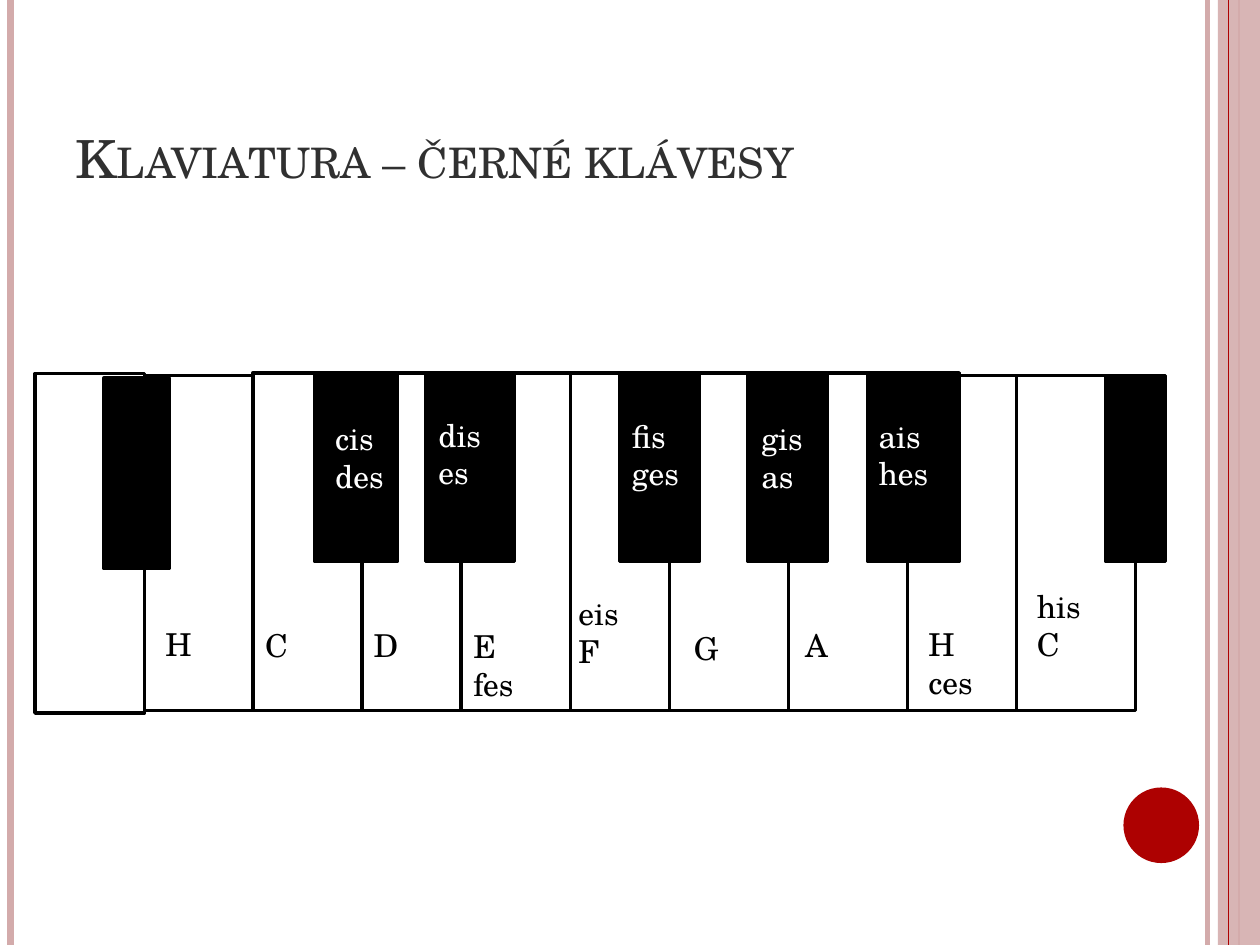
from dataclasses import dataclass

from lxml import etree
from pptx import Presentation
from pptx.dml.color import RGBColor
from pptx.enum.shapes import MSO_CONNECTOR, MSO_SHAPE
from pptx.enum.text import MSO_ANCHOR
from pptx.oxml.ns import qn
from pptx.util import Pt

RECTANGLE, OVAL = MSO_SHAPE.RECTANGLE, MSO_SHAPE.OVAL
STRAIGHT = MSO_CONNECTOR.STRAIGHT
BOTTOM, TOP = MSO_ANCHOR.BOTTOM, MSO_ANCHOR.TOP


@dataclass(frozen=True)
class Theme:
    font: str = "TeX Gyre Schola"
    title_size: int = 30
    label_size: int = 18
    title: RGBColor = RGBColor(0x30, 0x30, 0x30)
    red: RGBColor = RGBColor(0xAD, 0x01, 0x01)
    pink: RGBColor = RGBColor(0xD3, 0xAB, 0xAB)
    black: RGBColor = RGBColor(0, 0, 0)
    white: RGBColor = RGBColor(0xFF, 0xFF, 0xFF)


theme = Theme()
deck = Presentation()
deck.slide_width, deck.slide_height = Pt(720), Pt(540)
page = deck.slides.add_slide(deck.slide_layouts[6])


def add_solid(kind, left, top, width, height, color, outline=None):
    shape = page.shapes.add_shape(kind, Pt(left), Pt(top), Pt(width), Pt(height))
    shape.shadow.inherit = False
    shape.fill.solid()
    shape.fill.fore_color.rgb = color
    if outline is None:
        shape.line.fill.background()
    else:
        shape.line.color.rgb = outline
        shape.line.width = Pt(2)
    return shape


def add_text(lines, left, top, width, height, size, color, anchor=TOP):
    box = page.shapes.add_textbox(Pt(left), Pt(top), Pt(width), Pt(height))
    frame = box.text_frame
    frame.word_wrap = True
    frame.vertical_anchor = anchor
    frame.text = "\n".join(lines)
    for para in frame.paragraphs:
        para.font.name = theme.font
        para.font.size = Pt(size)
        para.font.color.rgb = color
    return frame


# Side decoration: band, vertical rules and disc
band = add_solid(RECTANGLE, 696, 0, 24, 540, theme.pink)
band_color = band.fill._xPr.find(".//" + qn("a:srgbClr"))
etree.SubElement(band_color, qn("a:alpha"), val="87000")

rules = [(690, 3, theme.pink), (6, 4.5, theme.pink),
         (708, 1.5, theme.pink), (702, 0.75, theme.red)]
for x, weight, color in rules:
    rule = page.shapes.add_connector(STRAIGHT, Pt(x), 0, Pt(x), Pt(540))
    rule.line.color.rgb = color
    rule.line.width = Pt(weight)
    etree.SubElement(rule._element.spPr, qn("a:effectLst"))

add_solid(OVAL, 642, 450, 43.2, 43.2, theme.red)

# Title in small caps
title = add_text(["Klaviatura – černé klávesy"], 36, 21.6, 588, 90,
                 theme.title_size, theme.title, BOTTOM)
title.paragraphs[0].runs[0]._r.get_or_add_rPr().set("cap", "small")

# White keys: each spans two neighbouring edges
edges = [20, 82.5, 144.5, 207, 263.5, 326, 382.5, 450.5, 518.5, 581, 649]
tops = [213.5, 214.5] + [213] * 6 + [214.5] * 2
bottoms = [407.5] + [406] * 9
for left, right, top, bottom in zip(edges, edges[1:], tops, bottoms):
    add_solid(RECTANGLE, left, top, right - left, bottom - top,
              theme.white, theme.black)

# Black keys: left, top, width, bottom
black_keys = [(59.5, 216, 37, 325), (180, 213, 47, 321), (243, 213, 51, 321),
              (354, 213, 45.5, 321), (427.5, 213, 45.5, 321),
              (496, 213, 52, 321), (632, 214.5, 34, 321)]
for left, top, width, bottom in black_keys:
    add_solid(RECTANGLE, left, top, width, bottom - top, theme.black, theme.black)

# Note names: lines, left, top
white_key_notes = [
    (["H"], 87.5, 353.5), (["C"], 144.5, 354), (["D"], 206.5, 354),
    (["E", "fes"], 263.5, 355), (["eis", "F"], 323.5, 336),
    (["G"], 389.5, 356), (["A"], 453, 354), (["H", "ces"], 523.5, 353.5),
    (["his", "C"], 585.5, 332),
]
black_key_notes = [
    (["cis", "des"], 184.5, 236), (["dis", "es"], 243.5, 234),
    (["fis", "ges"], 354, 234.5), (["gis", "as"], 428, 236),
    (["ais", "hes"], 495, 234.5),
]
for notes, color in [(white_key_notes, theme.black), (black_key_notes, theme.white)]:
    for lines, left, top in notes:
        add_text(lines, left, top, 50, 7.2 + 21.6 * len(lines),
                 theme.label_size, color)

deck.save("out.pptx")
